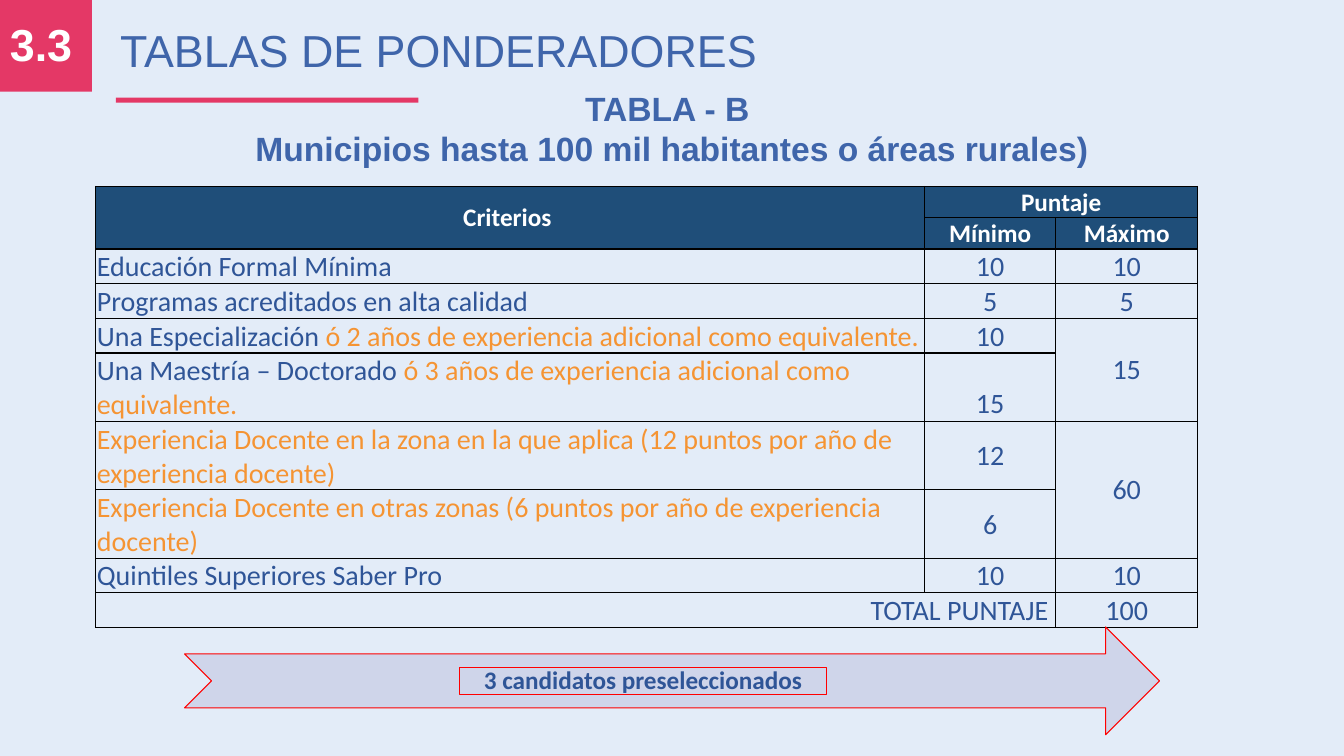
"""Build the slide with the weighting table for small towns and rural areas."""
from lxml.etree import SubElement
from pptx import Presentation
from pptx.dml.color import RGBColor
from pptx.enum.shapes import MSO_SHAPE as Shape
from pptx.enum.text import MSO_ANCHOR as Anchor, MSO_AUTO_SIZE as AutoSize, PP_ALIGN as Align
from pptx.oxml.ns import qn
from pptx.util import Inches, Pt

BACKGROUND = RGBColor(0xE3, 0xEC, 0xF8)
PINK = RGBColor(0xE4, 0x38, 0x66)
WHITE = RGBColor(0xFF, 0xFF, 0xFF)
HEADING = RGBColor(0x3F, 0x65, 0xAA)
NAVY = RGBColor(0x1F, 0x4E, 0x79)
BLUE = RGBColor(0x2F, 0x55, 0x97)
ORANGE = RGBColor(0xF5, 0x94, 0x33)
ARROW_FILL = RGBColor(0xCF, 0xD5, 0xEA)
RED = RGBColor(0xFF, 0x00, 0x00)
BLACK = RGBColor(0x00, 0x00, 0x00)

SECTION = "3.3"
TITLE = "TABLAS DE PONDERADORES"
SUBTITLE = ["TABLA - B ", "Municipios hasta 100 mil habitantes o áreas rurales)"]
RESULT = "3 candidatos preseleccionados"
HEADER_ROWS = 2
ROWS = [
    ("Criterios ", "Puntaje", ""),
    ("", "Mínimo", "Máximo"),
    ("Educación Formal Mínima", "10", "10"),
    ("Programas acreditados en alta calidad", "5", "5"),
    ([("Una Especialización ", BLUE),
      ("ó 2 años de experiencia adicional como equivalente.", ORANGE)], "10", "15"),
    ([("Una Maestría – Doctorado ", BLUE),
      ("ó 3 años de experiencia adicional como equivalente.", ORANGE)], "15", ""),
    ([("Experiencia Docente en la zona en la que aplica "
       "(12 puntos por año de experiencia docente)", ORANGE)], "12", "60"),
    ([("Experiencia Docente en otras zonas "
       "(6 puntos por año de experiencia docente)", ORANGE)], "6", ""),
    ("Quintiles Superiores Saber Pro", "10", "10"),
    ("TOTAL PUNTAJE\u00a0", "", "100"),
]
MERGES = [((0, 0), (1, 0)), ((0, 1), (0, 2)), ((4, 2), (5, 2)),
          ((6, 2), (7, 2)), ((9, 0), (9, 1))]
MIDDLE_SCORES = {(4, 2), (6, 1), (6, 2), (7, 1)}
COLUMN_SHARES = [8.22, 1.3, 1.41]
ROW_SHARES = [0.3, 0.3] + [0.33] * 3 + [0.66] * 3 + [0.33] * 2

PERCENT_BOXES = {
    "badge": (0, 0, 6.83, 12.13),
    "section": (0, 1.6, 7.13, 8.53),
    "title": (8.18, 2.4, 87.4, 8.53),
    "subtitle": (17.1, 10.93, 65.79, 12.13),
    "rule": (8.63, 12.93, 22.5, 0.67),
    "table": (7.13, 24.67, 82, 58),
    "arrow": (13.73, 82.93, 72.54, 14.27),
    "result": (34.2, 88.27, 27.3, 3.6),
}

presentation = Presentation()
presentation.slide_width, presentation.slide_height = Inches(13.33), Inches(7.5)
slide = presentation.slides.add_slide(presentation.slide_layouts[5])
slide.background.fill.solid()
slide.background.fill.fore_color.rgb = BACKGROUND


def box(name):
    """Turn the percentages of a named box into slide lengths."""
    sides = (presentation.slide_width, presentation.slide_height) * 2
    return [int(side * share / 100) for side, share in zip(sides, PERCENT_BOXES[name])]


def write(frame, paragraphs, *, size, color, font="Arial", bold=False,
          align=Align.LEFT, anchor=Anchor.TOP):
    """Write paragraphs, each a string or a list of (text, color) runs."""
    frame.word_wrap = True
    frame.vertical_anchor = anchor
    for index, content in enumerate(paragraphs):
        paragraph = frame.add_paragraph() if index else frame.paragraphs[0]
        paragraph.alignment = align
        runs = [(content, color)] if isinstance(content, str) else content
        for text, run_color in runs:
            run = paragraph.add_run()
            run.text = text
            run.font.name, run.font.size, run.font.bold = font, Pt(size), bold
            run.font.color.rgb = run_color


def add_block(kind, name, fill=None, line=None):
    """Add a flat preset shape in a named box."""
    shape = slide.shapes.add_shape(kind, *box(name))
    shape.shadow.inherit = False
    for part, color in ((shape.fill, fill), (shape.line.fill, line)):
        if color is None:
            part.background()
        else:
            part.solid()
            part.fore_color.rgb = color
    if line is not None:
        shape.line.width = Pt(0.75)
    return shape


def add_borders(cell):
    """Draw a thin black line on each side of a cell."""
    properties = cell._tc.get_or_add_tcPr()
    for index, side in enumerate(("a:lnL", "a:lnR", "a:lnT", "a:lnB")):
        line = properties.makeelement(qn(side), {"w": str(Pt(1))})
        properties.insert(index, line)
        SubElement(SubElement(line, qn("a:solidFill")), qn("a:srgbClr"), val=str(BLACK))


def add_scores():
    """Add the table of criteria and scores."""
    left, top, width, height = box("table")
    table = slide.shapes.add_table(
        len(ROWS), len(COLUMN_SHARES), left, top, width, height).table
    for column, share in zip(table.columns, COLUMN_SHARES):
        column.width = int(width * share / sum(COLUMN_SHARES))
    for row, share in zip(table.rows, ROW_SHARES):
        row.height = int(height * share / sum(ROW_SHARES))
    for first, last in MERGES:
        table.cell(*first).merge(table.cell(*last))
    for row_index, row in enumerate(ROWS):
        header = row_index < HEADER_ROWS
        for column_index, content in enumerate(row):
            cell = table.cell(row_index, column_index)
            cell.margin_left = cell.margin_right = cell.margin_top = Inches(0.01)
            cell.margin_bottom = 0
            if header:
                cell.fill.solid()
                cell.fill.fore_color.rgb = NAVY
            else:
                cell.fill.background()
            add_borders(cell)
            if not content:
                continue
            align = Align.CENTER if header or column_index else Align.LEFT
            if row_index == len(ROWS) - 1 and column_index == 0:
                align = Align.RIGHT
            middle = header or not column_index or (row_index, column_index) in MIDDLE_SCORES
            anchor = Anchor.MIDDLE if middle else Anchor.BOTTOM
            write(cell.text_frame, [content], size=18 if header else 20,
                  color=WHITE if header else BLUE, font="Calibri", bold=header, align=align)
            cell.vertical_anchor = anchor


add_block(Shape.RECTANGLE, "badge", PINK)
section = slide.shapes.add_textbox(*box("section"))
write(section.text_frame, [SECTION], size=32, color=WHITE, bold=True)

title = slide.shapes.title
title.left, title.top, title.width, title.height = box("title")
title.text_frame.auto_size = AutoSize.NONE
write(title.text_frame, [TITLE], size=32, color=HEADING)

subtitle = slide.shapes.add_textbox(*box("subtitle"))
write(subtitle.text_frame, SUBTITLE, size=24, color=HEADING, bold=True, align=Align.CENTER)
add_block(Shape.RECTANGLE, "rule", PINK)
add_scores()

add_block(Shape.NOTCHED_RIGHT_ARROW, "arrow", ARROW_FILL, RED)
result = add_block(Shape.RECTANGLE, "result", line=RED)
result.text_frame.margin_top = result.text_frame.margin_bottom = 0
write(result.text_frame, [RESULT], size=18, color=BLUE, font="Calibri", bold=True,
      align=Align.CENTER, anchor=Anchor.MIDDLE)
result.text_frame.paragraphs[0].line_spacing = 0.9

presentation.save("out.pptx")
